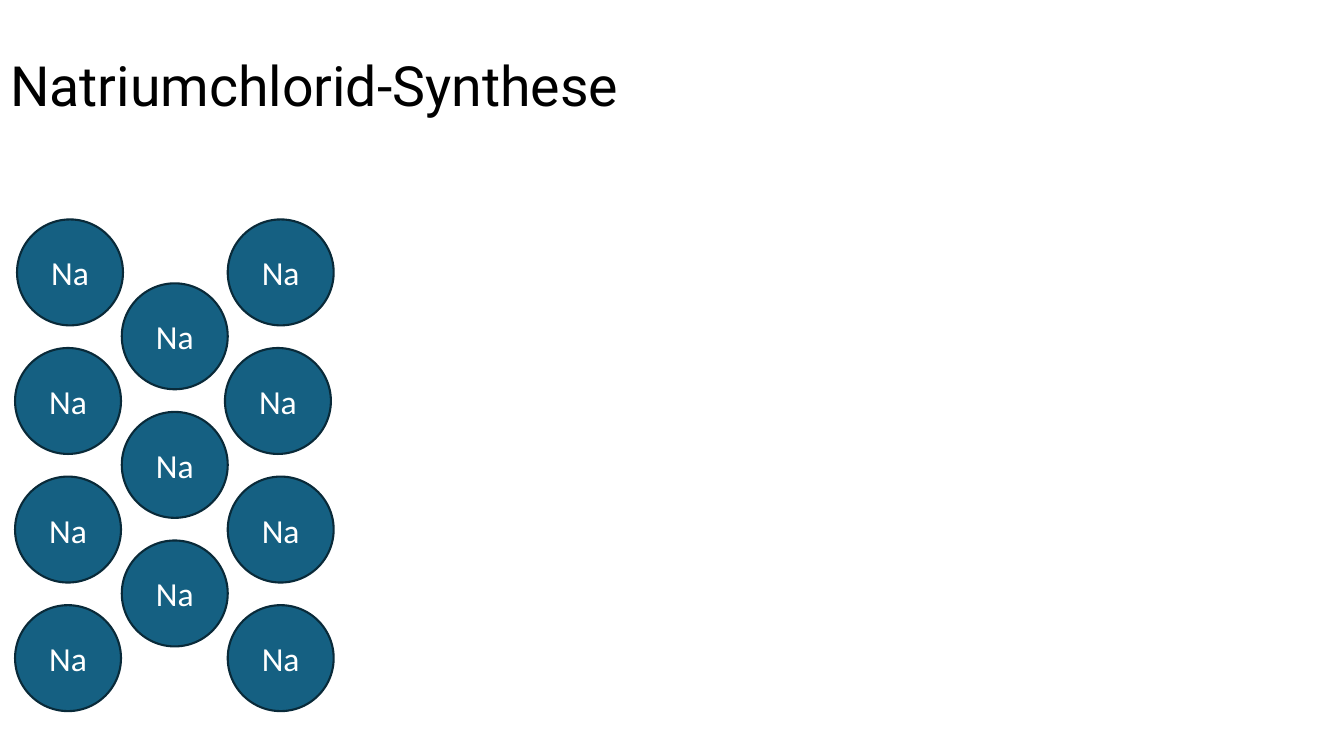
"""Build a slide with a lattice of sodium atoms for the sodium chloride synthesis."""
from dataclasses import dataclass

from pptx import Presentation
from pptx.dml.color import RGBColor
from pptx.enum.shapes import MSO_SHAPE
from pptx.enum.text import MSO_ANCHOR, MSO_AUTO_SIZE, PP_ALIGN
from pptx.slide import Slide
from pptx.text.text import TextFrame
from pptx.util import Cm, Pt

OVAL = MSO_SHAPE.OVAL
MIDDLE = MSO_ANCHOR.MIDDLE
NO_FIT = MSO_AUTO_SIZE.NONE
LEFT, CENTER = PP_ALIGN.LEFT, PP_ALIGN.CENTER

COLORS = {"title": "000000", "atom": "156082", "outline": "092A39", "symbol": "FFFFFF"}
TITLE_ONLY = 5
DIAMETER = 2.67
ROW_PITCH = 3.24


@dataclass(frozen=True)
class AtomColumn:
    """A column of atoms: top of the first one and the left edge of each, in cm."""
    top: float
    lefts: tuple[float, ...]


COLUMNS = (
    AtomColumn(7.14, (3.07, 3.07, 3.07)),
    AtomColumn(5.53, (0.43, 0.38, 0.38, 0.38)),
    AtomColumn(5.53, (5.74, 5.67, 5.74, 5.74)),
)


def color(name: str) -> RGBColor:
    """Return the named palette colour."""
    return RGBColor.from_string(COLORS[name])


def write(tf: TextFrame, text: str, font: str, size: float, ink: str, align: PP_ALIGN) -> None:
    """Set one formatted, vertically centred paragraph."""
    tf.text = text
    tf.vertical_anchor = MIDDLE
    tf.word_wrap = True
    p = tf.paragraphs[0]
    p.alignment = align
    r = p.runs[0]
    r.font.name = font
    r.font.size = Pt(size)
    r.font.color.rgb = color(ink)


def add_title(s: Slide, text: str) -> None:
    """Place and format the slide title."""
    sp = s.shapes.title
    sp.left, sp.top, sp.width, sp.height = Cm(0), Cm(1.32), Cm(29.11), Cm(1.8)
    tf = sp.text_frame
    write(tf, text, "Roboto", 39.6, "title", LEFT)
    tf.auto_size = NO_FIT
    tf.paragraphs[0].line_spacing = 0.9


def add_atom(s: Slide, left: float, top: float) -> None:
    """Draw one sodium atom."""
    sp = s.shapes.add_shape(OVAL, Cm(left), Cm(top), Cm(DIAMETER), Cm(DIAMETER))
    sp.shadow.inherit = False
    sp.fill.solid()
    sp.fill.fore_color.rgb = color("atom")
    sp.line.color.rgb = color("outline")
    sp.line.width = Pt(1.5)
    write(sp.text_frame, "Na", "Calibri", 24, "symbol", CENTER)


def main() -> None:
    """Build and save the presentation."""
    prs = Presentation()
    prs.slide_width, prs.slide_height = Cm(33.87), Cm(19.05)
    s = prs.slides.add_slide(prs.slide_layouts[TITLE_ONLY])
    add_title(s, "Natriumchlorid-Synthese")
    for column in COLUMNS:
        for row, left in enumerate(column.lefts):
            add_atom(s, left, column.top + row * ROW_PITCH)
    prs.save("out.pptx")


if __name__ == "__main__":
    main()
